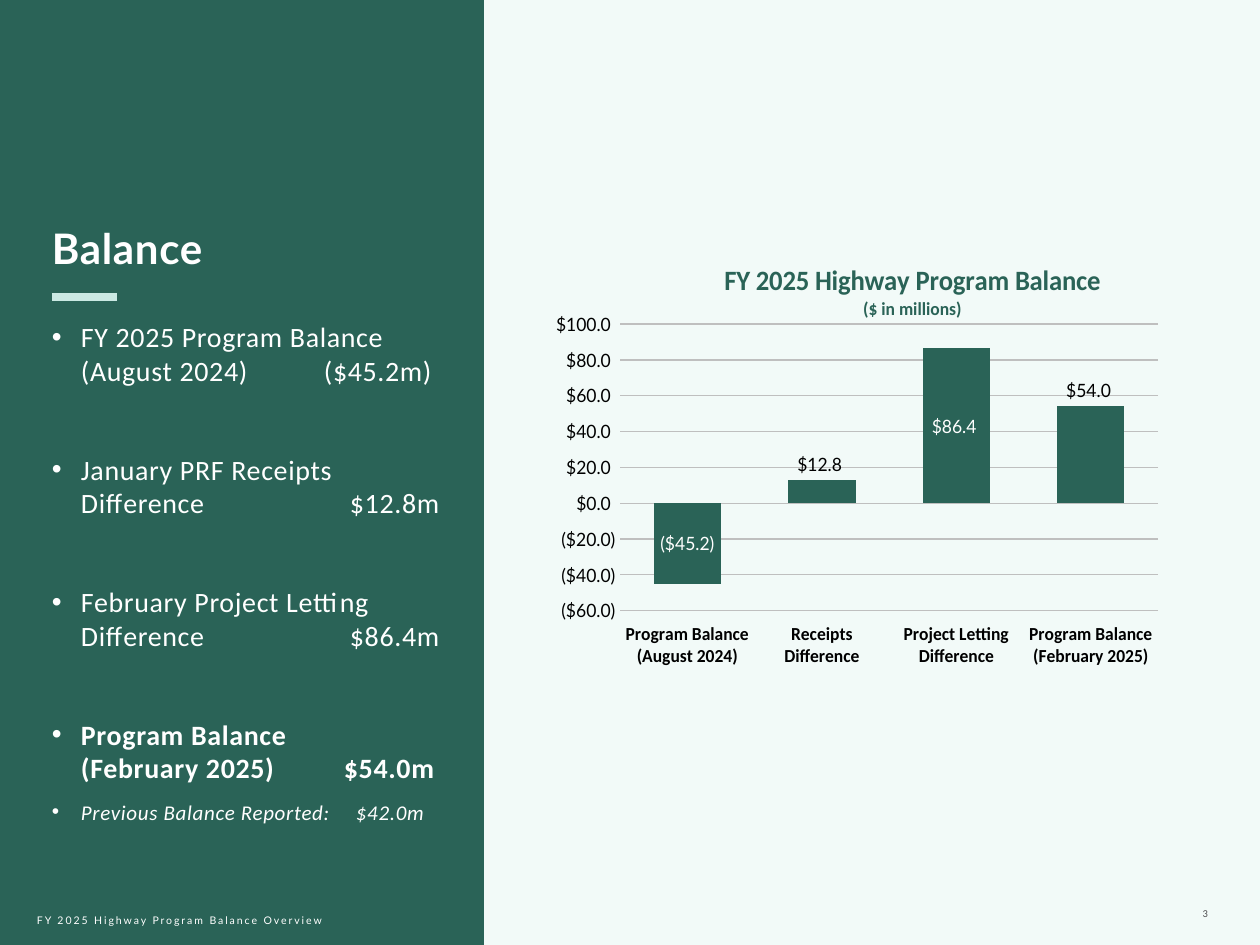
from copy import deepcopy

from lxml import etree
from pptx import Presentation
from pptx.chart.data import CategoryChartData
from pptx.dml.color import RGBColor
from pptx.enum.chart import XL_CHART_TYPE, XL_LABEL_POSITION, XL_TICK_LABEL_POSITION, XL_TICK_MARK
from pptx.enum.shapes import MSO_CONNECTOR, MSO_SHAPE
from pptx.enum.text import MSO_ANCHOR, PP_ALIGN
from pptx.oxml import parse_xml
from pptx.oxml.ns import nsdecls, qn
from pptx.util import Emu, Pt

LEFT, CENTER, RIGHT = PP_ALIGN.LEFT, PP_ALIGN.CENTER, PP_ALIGN.RIGHT
TOP, MIDDLE, BOTTOM = MSO_ANCHOR.TOP, MSO_ANCHOR.MIDDLE, MSO_ANCHOR.BOTTOM
CENTER_LABEL, OUTSIDE_LABEL = XL_LABEL_POSITION.CENTER, XL_LABEL_POSITION.OUTSIDE_END
NO_TICK, LOW_LABELS = XL_TICK_MARK.NONE, XL_TICK_LABEL_POSITION.LOW
EMU_PER_PX = 914400 / 126

GREEN, MINT, PALE, WHITE, BLACK = "2A6357", "CBE9E3", "F2FAF8", "FFFFFF", "000000"
GREY, GRID = "4D4D4F", "BFBFBF"
MONEY = '"$"#,##0.0_);\\("$"#,##0.0\\)'

SMALL = {"size": 6, "color": WHITE, "name": "Lato"}
BODY = {"size": 16, "color": WHITE, "name": "Calibri", "bold": False}
BODY_BOLD = {**BODY, "bold": True}
BODY_NOTE = {**BODY, "size": 12, "italic": True}
AXIS = {"size": 10.5, "color": BLACK, "name": "Lato", "bold": False}

# Label, amount, left edge of the amount in px, space before in points, format
BALANCE_ITEMS = [
    ("FY 2025 Program Balance\v(August 2024)", "($45.2m)", 324, 0, BODY),
    ("January PRF Receipts\vDifference", "$12.8m", 350, 37.25, BODY),
    ("February Project Letting\vDifference", "$86.4m", 350, 37.25, BODY),
    ("Program Balance\v(February 2025)", "$54.0m", 344, 37.25, BODY_BOLD),
    ("Previous Balance Reported:", "$42.0m", 356, 8.5, BODY_NOTE),
]
BODY_LEFT, BODY_INDENT = 52, 29

CHART_TITLE = [("FY 2025 Highway Program Balance", 16), ("($ in millions)", 10.5)]
CHART_VALUES = {
    "Program Balance (August 2024)": -45.2,
    "Receipts Difference": 12.8,
    "Project Letting Difference": 86.4,
    "Program Balance (February 2025)": 54,
}
OUTSIDE_POINTS = (1, 3)
TITLE_AREA = {"x": 0.23, "y": 0}
PLOT_AREA = {"x": 0.06, "y": 0.15, "w": 0.91, "h": 0.65}


def px(length):
    return Emu(round(length * EMU_PER_PX))


def rgb(color):
    return RGBColor.from_string(color)


def format_font(font, values):
    for attribute, value in values.items():
        if attribute == "color":
            font.color.rgb = rgb(value)
        else:
            setattr(font, attribute, Pt(value) if attribute == "size" else value)


def format_runs(paragraph, values, spacing):
    """Format the runs and give line breaks the same properties; spacing is in points."""
    for run in paragraph.runs:
        format_font(run.font, values)
        properties = run._r.get_or_add_rPr()
        properties.set("spc", str(round(spacing * 100)))
        for line_break in paragraph._p.findall(qn("a:br")):
            if line_break.find(qn("a:rPr")) is None:
                line_break.append(deepcopy(properties))


def format_frame(frame, anchor, inset=0):
    frame.word_wrap = True
    frame.vertical_anchor = anchor
    frame.margin_left = frame.margin_right = 0
    frame.margin_top = frame.margin_bottom = px(inset)


def add_text_box(slide, box, anchor, inset=0):
    frame = slide.shapes.add_textbox(*map(px, box)).text_frame
    format_frame(frame, anchor, inset)
    return frame


def add_panel(slide):
    panel = slide.shapes.add_shape(MSO_SHAPE.RECTANGLE, *map(px, (0, 0, 484, 945)))
    panel.shadow.inherit = False
    panel.fill.solid()
    panel.fill.fore_color.rgb = rgb(GREEN)
    panel.line.fill.background()


def add_title(slide):
    title = slide.shapes.title
    title.left, title.top, title.width, title.height = map(px, (52, 222, 393, 50))
    format_frame(title.text_frame, TOP)
    paragraph = title.text_frame.paragraphs[0]
    paragraph.text, paragraph.alignment = "Balance", LEFT
    format_runs(paragraph, {"size": 24, "color": WHITE, "name": "Lato", "bold": True}, 0.4)

    rule = slide.shapes.add_connector(MSO_CONNECTOR.STRAIGHT, *map(px, (52, 297, 117, 297)))
    rule.line.color.rgb = rgb(MINT)
    rule.line.width = Pt(4.5)
    etree.SubElement(rule._element.spPr, qn("a:effectLst"))


def add_balance_list(slide):
    frame = add_text_box(slide, (BODY_LEFT, 320, 430, 510), TOP)
    for index, (label, amount, amount_left, space, values) in enumerate(BALANCE_ITEMS):
        paragraph = frame.add_paragraph() if index else frame.paragraphs[0]
        paragraph.text = f"{label}\t{amount}"
        paragraph.space_before = Pt(space)
        properties = paragraph._p.get_or_add_pPr()
        properties.set("marL", str(px(BODY_INDENT)))
        properties.set("indent", str(-px(BODY_INDENT)))
        etree.SubElement(properties, qn("a:buFont"), typeface="Arial")
        etree.SubElement(properties, qn("a:buChar"), char="•")
        tabs = etree.SubElement(properties, qn("a:tabLst"))
        etree.SubElement(tabs, qn("a:tab"), pos=str(px(amount_left - BODY_LEFT)), algn="l")
        format_runs(paragraph, values, 0.4)


def set_layout(element, index, area, target=""):
    """Place a chart part by fractions of the chart; index is where its layout belongs."""
    for layout in element.findall(qn("c:layout")):
        element.remove(layout)
    sizes = "".join(f'<c:{key} val="{value}"/>' for key, value in area.items())
    element.insert(index, parse_xml(
        f'<c:layout {nsdecls("c")}><c:manualLayout>{target}'
        f'<c:xMode val="edge"/><c:yMode val="edge"/>{sizes}</c:manualLayout></c:layout>'))


def add_chart_title(chart):
    frame = chart.chart_title.text_frame
    for index, (text, size) in enumerate(CHART_TITLE):
        paragraph = frame.add_paragraph() if index else frame.paragraphs[0]
        paragraph.text, paragraph.alignment = text, CENTER
        format_runs(paragraph, {"size": size, "color": GREEN, "name": "Calibri", "bold": True}, 0)
    chart.chart_title.include_in_layout = False
    set_layout(chart.chart_title._element, 1, TITLE_AREA)


def add_balance_chart(slide):
    data = CategoryChartData(number_format=MONEY)
    data.categories = list(CHART_VALUES)
    data.add_series("Series 1", list(CHART_VALUES.values()))
    chart = slide.shapes.add_chart(
        XL_CHART_TYPE.COLUMN_CLUSTERED, *map(px, (556, 258, 620, 441)), data).chart
    chart.has_legend = False
    format_font(chart.font, {"size": 10, "color": BLACK, "name": "Lato"})
    add_chart_title(chart)
    set_layout(chart._chartSpace.chart.plotArea, 0, PLOT_AREA, '<c:layoutTarget val="inner"/>')

    categories, amounts = chart.category_axis, chart.value_axis
    for axis in (categories, amounts):
        axis.major_tick_mark = axis.minor_tick_mark = NO_TICK
        format_font(axis.tick_labels.font, AXIS)
    format_font(categories.tick_labels.font, {"name": "Calibri", "bold": True})
    categories.tick_label_position = LOW_LABELS
    amounts.minimum_scale, amounts.maximum_scale, amounts.major_unit = -60, 100, 20
    amounts.tick_labels.number_format = MONEY
    amounts.tick_labels.number_format_is_linked = False
    amounts.format.line.fill.background()
    for line in (categories.format.line, amounts.major_gridlines.format.line):
        line.color.rgb = rgb(GRID)
        line.width = Pt(0.75)

    plot = chart.plots[0]
    plot.gap_width, plot.overlap, plot.vary_by_categories = 100, -24, False
    series = plot.series[0]
    series.invert_if_negative = False
    series.format.fill.solid()
    series.format.fill.fore_color.rgb = rgb(GREEN)
    labels = series.data_labels
    labels.show_value, labels.position = True, CENTER_LABEL
    labels.number_format, labels.number_format_is_linked = MONEY, False
    format_font(labels.font, {**AXIS, "color": WHITE})
    for index in OUTSIDE_POINTS:
        label = series.points[index].data_label
        format_font(label.font, AXIS)
        label.position = OUTSIDE_LABEL


def add_small_text(slide, text, box, anchor, alignment, values):
    paragraph = add_text_box(slide, box, anchor, 6).paragraphs[0]
    paragraph.text, paragraph.alignment = text, alignment
    format_runs(paragraph, values, 1.1)


def main():
    presentation = Presentation()
    presentation.slide_width, presentation.slide_height = px(1260), px(945)
    slide = presentation.slides.add_slide(presentation.slide_layouts[5])
    slide.background.fill.solid()
    slide.background.fill.fore_color.rgb = rgb(PALE)
    add_panel(slide)
    add_title(slide)
    add_balance_list(slide)
    add_balance_chart(slide)
    add_small_text(slide, "FY 2025 Highway Program Balance Overview",
                   (37, 901, 329, 38), MIDDLE, LEFT, SMALL)
    add_small_text(slide, "3", (1086, 876, 122, 50), BOTTOM, RIGHT,
                   {**SMALL, "color": GREY, "name": "Calibri"})
    # The title placeholder starts at the back, so the panel goes behind it.
    slide.shapes._spTree.insert(2, slide.shapes[1]._element)
    presentation.save("out.pptx")


if __name__ == "__main__":
    main()
